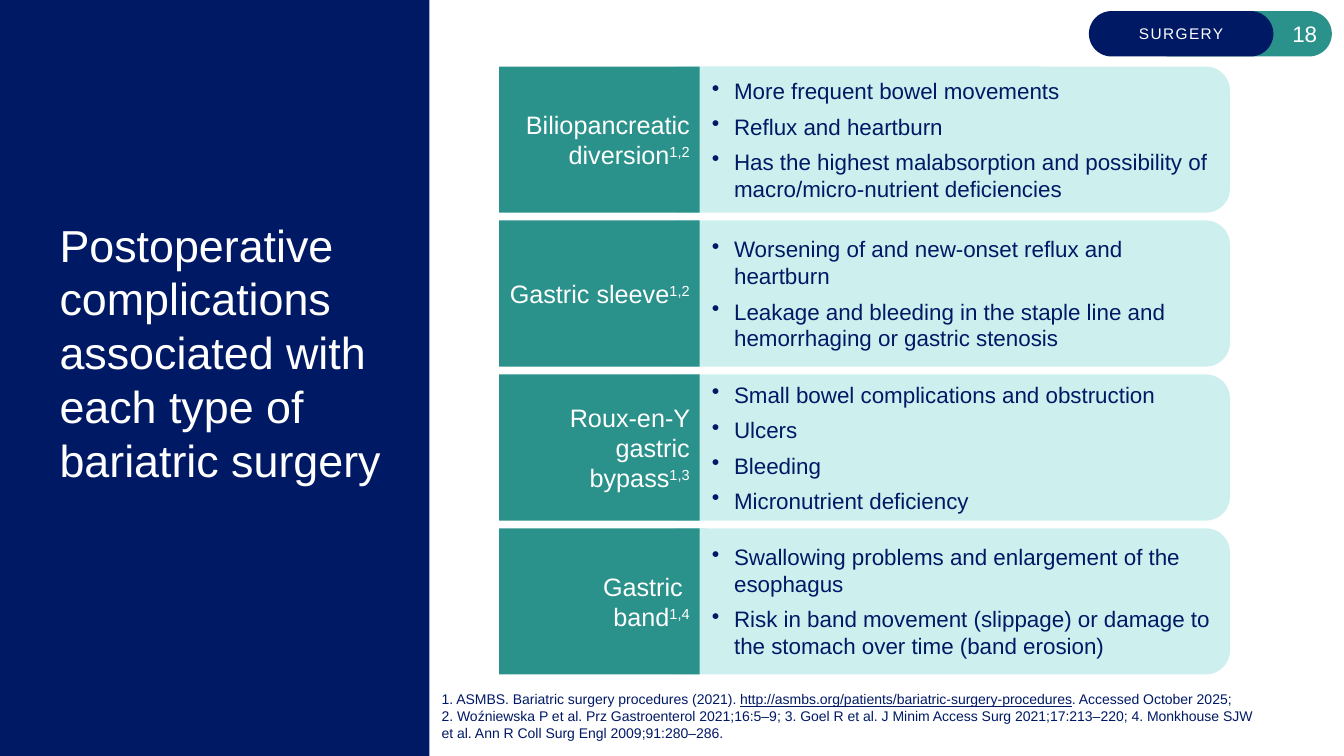
import pptx
import pptx.util
import pptx.dml.color
import pptx.enum.shapes
import pptx.enum.text
import pptx.oxml.ns
import lxml.etree

Inches, Pt = pptx.util.Inches, pptx.util.Pt
SHAPE = pptx.enum.shapes.MSO_SHAPE
ALIGN = pptx.enum.text.PP_ALIGN
ANCHOR = pptx.enum.text.MSO_ANCHOR

THEME = {
    "font": "Arial",
    "navy": "001965", "teal": "2A918B", "mint": "CDF0EE", "white": "FFFFFF",
    "title": 32, "label": 18, "bullet": 16, "number": 16, "section": 11, "reference": 10,
}

# Slide and grid, in inches
WIDTH, HEIGHT = 13.33, 7.5
ROW_TOP, ROW_HEIGHT, ROW_PITCH = 0.66, 1.45, 1.527
LABEL_LEFT, LABEL_WIDTH = 4.95, 1.99
DETAIL_LEFT, DETAIL_WIDTH = 6.49, 5.71
PILL_TOP, PILL_WIDTH, PILL_HEIGHT = 0.11, 1.83, 0.45

deck = pptx.Presentation()
deck.slide_width, deck.slide_height = Inches(WIDTH), Inches(HEIGHT)
slide = deck.slides.add_slide(deck.slide_layouts[6])


def add_box(kind, box, fill, margins=(0.1, 0.05, 0.1, 0.05), anchor=ANCHOR.MIDDLE):
    """Add a filled shape, or a text box when kind is None."""
    place = [Inches(length) for length in box]
    if kind is None:
        shape = slide.shapes.add_textbox(*place)
    else:
        shape = slide.shapes.add_shape(kind, *place)
        shape.shadow.inherit = False
        shape.fill.solid()
        shape.fill.fore_color.rgb = pptx.dml.color.RGBColor.from_string(THEME[fill])
        shape.line.fill.background()
    frame = shape.text_frame
    frame.word_wrap = True
    frame.vertical_anchor = anchor
    (frame.margin_left, frame.margin_top,
     frame.margin_right, frame.margin_bottom) = [Inches(m) for m in margins]
    return shape


def add_text(paragraph, text, size, color, align=ALIGN.LEFT):
    """Add text as runs, with a line break at each newline; return the last run."""
    paragraph.alignment = align
    for index, line in enumerate(text.split("\n")):
        if index:
            paragraph.add_line_break()
        run = paragraph.add_run()
        run.text = line
        run.font.name = THEME["font"]
        run.font.size = Pt(THEME[size])
        run.font.color.rgb = pptx.dml.color.RGBColor.from_string(THEME[color])
    return run


# Title panel
add_box(SHAPE.RECTANGLE, (0, 0, 4.26, HEIGHT), "navy")
title = add_box(None, (0.59, 0.45, 3.45, 6.08), None, (0, 0, 0, 0))
add_text(title.text_frame.paragraphs[0],
         "Postoperative complications associated with each type of bariatric surgery",
         "title", "white")

# Page number and section pills
for left, fill, text, size, align in [
    (11.38, "teal", "18", "number", ALIGN.RIGHT),
    (10.8, "navy", "SURGERY", "section", ALIGN.CENTER),
]:
    pill = add_box(SHAPE.ROUNDED_RECTANGLE, (left, PILL_TOP, PILL_WIDTH, PILL_HEIGHT),
                   fill, (0.08, 0.04, 0.08, 0.04))
    pill.adjustments[0] = 0.5
    pill_run = add_text(pill.text_frame.paragraphs[0], text, size, "white", align)
    if size == "section":
        pill_run.font._element.set("spc", "100")

# Procedures: label, reference marks, complications
procedures = [
    ("Biliopancreatic diversion", "1,2", [
        "More frequent bowel movements",
        "Reflux and heartburn",
        "Has the highest malabsorption and possibility of macro/micro-nutrient deficiencies"]),
    ("Gastric sleeve", "1,2", [
        "Worsening of and new-onset reflux and heartburn",
        "Leakage and bleeding in the staple line and hemorrhaging or gastric stenosis"]),
    ("Roux-en-Y gastric bypass", "1,3", [
        "Small bowel complications and obstruction",
        "Ulcers",
        "Bleeding",
        "Micronutrient deficiency"]),
    ("Gastric \nband", "1,4", [
        "Swallowing problems and enlargement of the esophagus",
        "Risk in band movement (slippage) or damage to the stomach over time (band erosion)"]),
]
for row, (procedure, marks, complications) in enumerate(procedures):
    top = ROW_TOP + row * ROW_PITCH

    detail = add_box(SHAPE.ROUNDED_RECTANGLE, (DETAIL_LEFT, top, DETAIL_WIDTH, ROW_HEIGHT),
                     "mint", (0.5, 0.05, 0.1, 0.05))
    for index, complication in enumerate(complications):
        frame = detail.text_frame
        item = frame.add_paragraph() if index else frame.paragraphs[0]
        properties = item._p.get_or_add_pPr()
        properties.set("marL", str(Inches(0.22)))
        properties.set("indent", str(Inches(-0.22)))
        item.space_after = Pt(6)
        bullet = lxml.etree.SubElement(properties, pptx.oxml.ns.qn("a:buChar"))
        bullet.set("char", "•")
        add_text(item, complication, "bullet", "navy")

    label = add_box(SHAPE.RECTANGLE, (LABEL_LEFT, top, LABEL_WIDTH, ROW_HEIGHT), "teal")
    heading = label.text_frame.paragraphs[0]
    add_text(heading, procedure, "label", "white", ALIGN.RIGHT)
    marks_run = add_text(heading, marks, "label", "white", ALIGN.RIGHT)
    marks_run.font._element.set("baseline", "30000")

# References
references = add_box(None, (4.38, 7, 8.12, 0.35), None, (0, 0, 0, 0), ANCHOR.BOTTOM)
citation = references.text_frame.paragraphs[0]
citation.space_after = Pt(6)
add_text(citation, "1. ASMBS. Bariatric surgery procedures (2021). ", "reference", "navy")
address = add_text(citation, "http://asmbs.org/patients/bariatric-surgery-procedures",
                   "reference", "navy")
address.font.underline = True
add_text(citation,
         ". Accessed October 2025; \n2. Woźniewska P et al. Prz Gastroenterol 2021;16:5–9; "
         "3. Goel R et al. J Minim Access Surg 2021;17:213–220; "
         "4. Monkhouse SJW et al. Ann R Coll Surg Engl 2009;91:280–286.",
         "reference", "navy")

deck.save("out.pptx")
